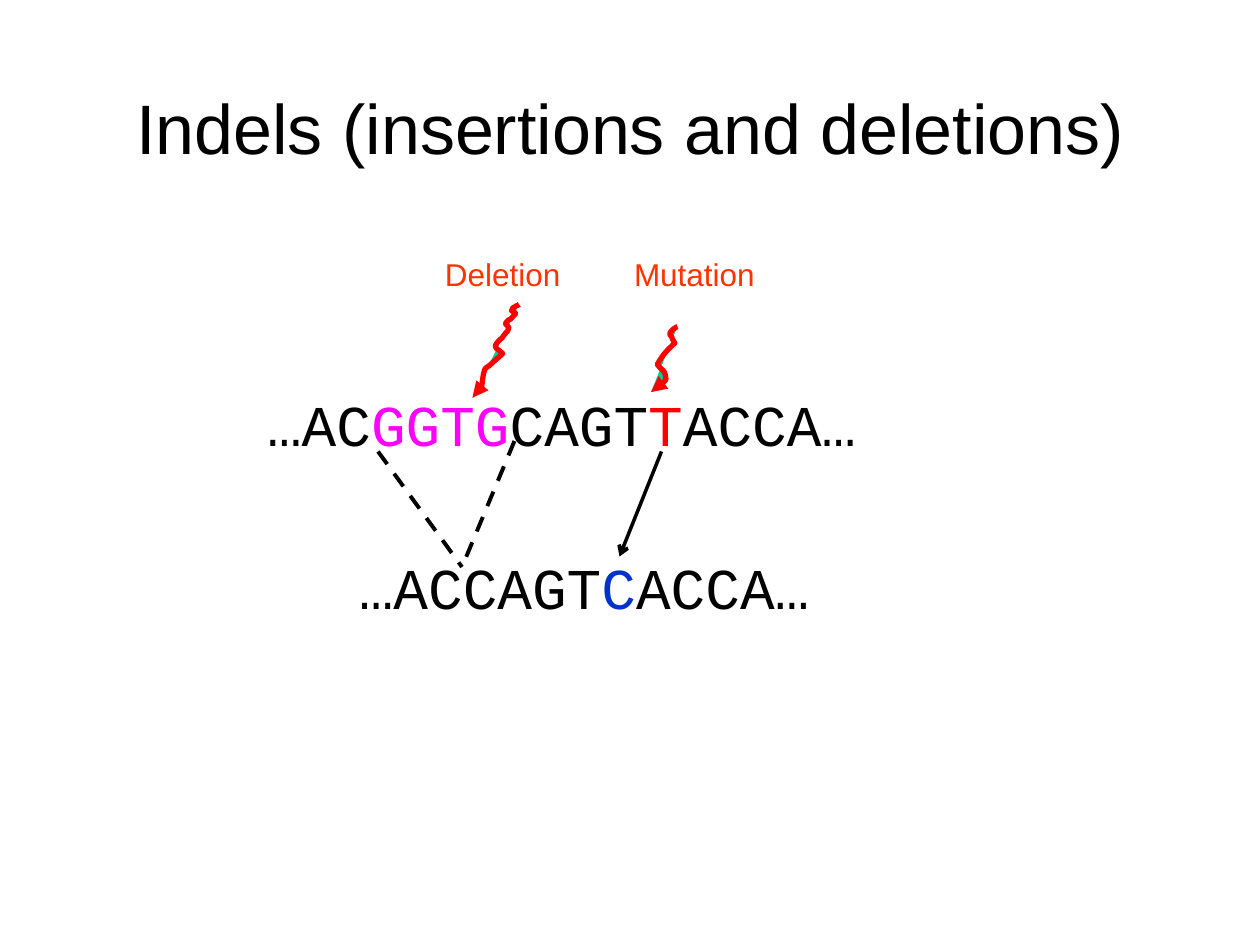
from lxml.etree import SubElement
from pptx import Presentation
from pptx.dml.color import RGBColor
from pptx.enum.dml import MSO_LINE
from pptx.enum.shapes import MSO_CONNECTOR
from pptx.enum.text import MSO_ANCHOR, MSO_AUTO_SIZE, PP_ALIGN
from pptx.oxml.ns import qn
from pptx.util import Inches, Pt

COLORS = {"ink": "000000", "deleted": "FF00FF", "mutated": "FF0000", "new": "0033CC",
          "label": "FF3300", "scribble": "FF0000", "scribble_fill": "00CC99"}
CELL = Inches(1) / 12  # the slide is a grid of 120 columns and 90 rows

# Bezier points in hundredths of an inch, from the arrowhead up
DELETION_PATH = [
    (0, 74), (1, 74), (2, 73), (3, 72), (4, 71), (7, 68), (7, 68), (8, 62), (8, 56), (10, 51),
    (11, 50), (13, 49), (14, 48), (17, 45), (21, 42), (24, 39), (19, 34), (20, 37), (18, 33),
    (20, 29), (22, 28), (24, 26), (25, 24), (28, 21), (28, 21), (28, 20), (29, 19), (29, 19),
    (28, 15), (24, 17), (28, 13), (28, 12), (30, 12), (30, 12), (35, 6), (36, 8), (31, 5),
    (33, 1), (31, 4), (35, 1), (36, 1), (37, 0), (37, 0)]
MUTATION_PATH = [
    (0, 52), (4, 49), (9, 46), (12, 42), (11, 33), (9, 36), (5, 30), (11, 20), (12, 20),
    (19, 13), (18, 12), (18, 11), (17, 10), (17, 8), (15, 7), (15, 6), (15, 3), (21, 0), (21, 0)]


def cells(*values):
    return [round(v * CELL) for v in values]


def rgb(name):
    return RGBColor.from_string(COLORS[name])


def style_line(sp, color, width, end=None, arrow=None):
    sp.line.color.rgb = rgb(color)
    sp.line.width = Pt(width)
    if arrow:
        SubElement(sp.line._get_or_add_ln(), qn(f"a:{end}"), type=arrow)


def add_text(slide, box, runs, font, size, spacing, wrap=False):
    tf = slide.shapes.add_textbox(*cells(*box)).text_frame
    tf.word_wrap = wrap
    tf.auto_size = MSO_AUTO_SIZE.SHAPE_TO_FIT_TEXT
    p = tf.paragraphs[0]
    p.line_spacing = spacing
    p.font.name, p.font.size = font, Pt(size)
    for text, color in runs:
        r = p.add_run()
        r.text = text
        r.font.color.rgb = rgb(color)


def add_line(slide, start, end):
    c = slide.shapes.add_connector(MSO_CONNECTOR.STRAIGHT, *cells(*start, *end))
    SubElement(c._element.spPr, qn("a:effectLst"))
    return c


def bezier_points(points, steps=6):
    for i in range(0, len(points) - 1, 3):
        for t in (k / steps for k in range(1, steps + 1)):
            weights = ((1 - t) ** 3, 3 * t * (1 - t) ** 2, 3 * t * t * (1 - t), t ** 3)
            yield tuple(sum(w * pt[axis] for w, pt in zip(weights, points[i:i + 4]))
                        for axis in (0, 1))


def add_scribble(slide, origin, points):
    left, top = cells(*origin)
    unit = Inches(0.01)
    curve = [(left + x * unit, top + y * unit) for x, y in bezier_points(points)]
    x, y = points[0]
    builder = slide.shapes.build_freeform(left + x * unit, top + y * unit)
    builder.add_line_segments(curve, close=False)
    sp = builder.convert_to_shape()
    sp.shadow.inherit = False
    sp.fill.solid()
    sp.fill.fore_color.rgb = rgb("scribble_fill")
    style_line(sp, "scribble", 3, "headEnd", "triangle")


def add_title(slide, box, text):
    sp = slide.shapes.title
    sp.left, sp.top, sp.width, sp.height = cells(*box)
    tf = sp.text_frame
    tf.text = text
    tf.vertical_anchor = MSO_ANCHOR.MIDDLE
    p = tf.paragraphs[0]
    p.alignment = PP_ALIGN.CENTER
    p.font.name, p.font.size = "Arial", Pt(40)
    p.font.color.rgb = rgb("ink")


def add_diagram(slide, left, top):
    def at(col, row, *size):
        return (left + col, top + row, *size)

    # Sequence before the changes
    add_text(slide, at(0.25, 13, 58.5, 7.4),
             [("…AC", "ink"), ("GGTG", "deleted"), ("CAGT", "ink"), ("T", "mutated"),
              ("ACCA…", "ink")], "Courier New", 33, 0.94)

    # Labels with their wavy arrows
    for text, col, width, origin, path in (
            ("Mutation", 35.2, 17.75, (38, 7.1), MUTATION_PATH),
            ("Deletion", 17.2, 17, (21, 5), DELETION_PATH)):
        add_text(slide, at(col, 0, width, 5.6), [(text, "label")], "Arial", 18, 0.93)
        add_scribble(slide, at(*origin), path)

    # Sequence after the changes
    add_text(slide, at(9, 28.5, 47, 7.4),
             [("…ACCAGT", "ink"), ("C", "new"), ("ACCA…", "ink")],
             "Courier New", 33, 0.94, wrap=True)

    # Dashed lines closing the gap, and the arrow to the new base
    for start in ((12, 19), (25, 18)):
        c = add_line(slide, at(*start), at(20, 30))
        style_line(c, "ink", 2.25)
        c.line.dash_style = MSO_LINE.DASH
    c = add_line(slide, at(39, 19), at(35, 29))
    style_line(c, "ink", 2, "tailEnd", "arrow")


def main():
    prs = Presentation()
    prs.slide_width, prs.slide_height = Inches(10), Inches(7.5)
    slide = prs.slides.add_slide(prs.slide_layouts[5])
    add_title(slide, (3, 7, 114, 10), "Indels (insertions and deletions)")
    add_diagram(slide, 24, 24)
    prs.save("out.pptx")


if __name__ == "__main__":
    main()
